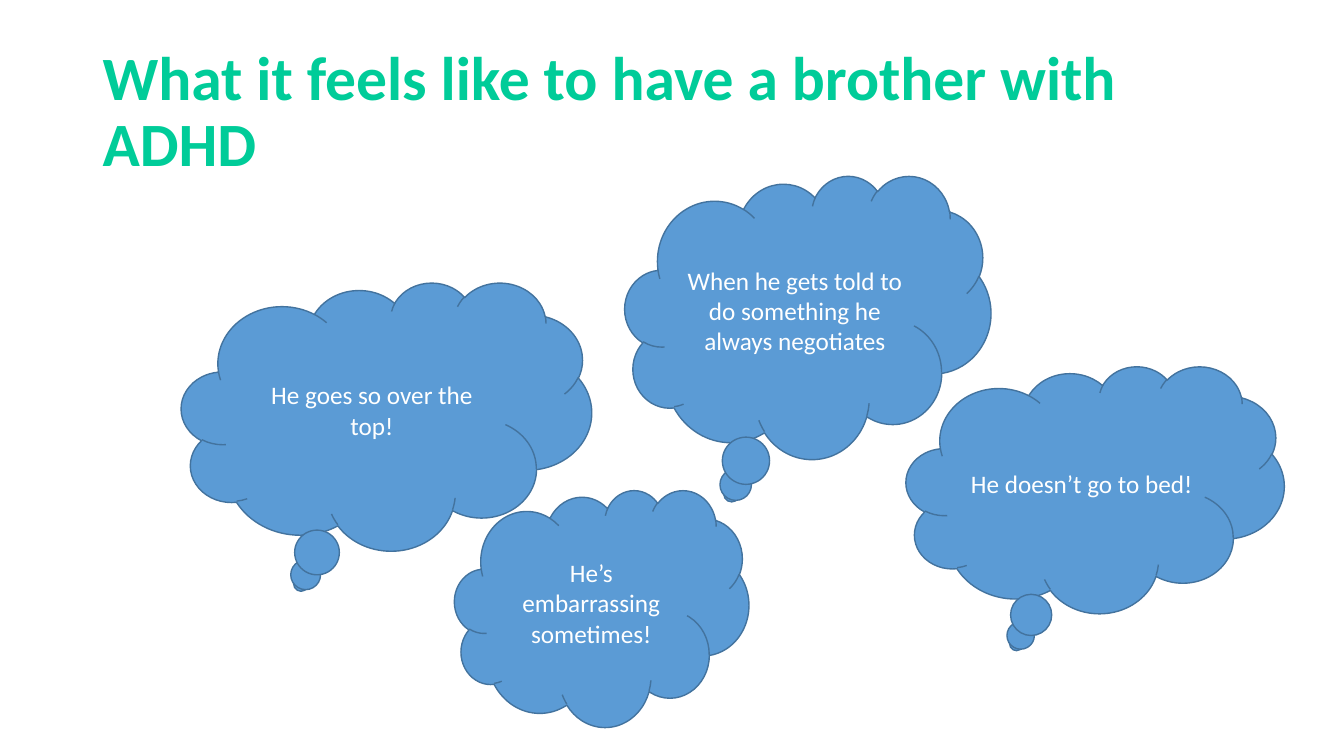
import pptx
import pptx.dml.color
import pptx.enum.shapes
import pptx.enum.text
import pptx.util

Pt = pptx.util.Pt
CALLOUT = pptx.enum.shapes.MSO_SHAPE.CLOUD_CALLOUT
CLOUD = pptx.enum.shapes.MSO_SHAPE.CLOUD
MIDDLE = pptx.enum.text.MSO_ANCHOR.MIDDLE
CENTER = pptx.enum.text.PP_ALIGN.CENTER

# Outline, text and box (left, top, width, height in points)
THOUGHTS = [
    (CALLOUT, "He goes so over the top!", (129.6, 201.6, 293, 191.5)),
    (CALLOUT, "He doesn’t go to bed!", (647.3, 261.4, 270, 176.4)),
    (CALLOUT, "When he gets told to do something he always negotiates",
     (446.4, 125.3, 261.4, 202.3)),
    (CLOUD, "He’s embarrassing sometimes!", (324.7, 349.9, 210.2, 169.2)),
]


def color(hex_code):
    return pptx.dml.color.RGBColor.from_string(hex_code)


def write(shape, text, size, hex_code, bold=False):
    """Put one vertically centred paragraph into the shape and return it."""
    frame = shape.text_frame
    frame.word_wrap = True
    frame.vertical_anchor = MIDDLE
    paragraph = frame.paragraphs[0]
    paragraph.text = text
    font = paragraph.font
    font.name = "Calibri"
    font.size = Pt(size)
    font.bold = bold
    font.color.rgb = color(hex_code)
    return paragraph


def add_title(slide, text, box):
    title = slide.shapes.add_textbox(*map(Pt, box))
    write(title, text, 44, "00CC99", bold=True).line_spacing = 0.9


def add_thought(slide, outline, text, box):
    thought = slide.shapes.add_shape(outline, *map(Pt, box))
    thought.shadow.inherit = False
    thought.fill.solid()
    thought.fill.fore_color.rgb = color("5B9BD5")
    thought.line.color.rgb = color("43739E")
    thought.line.width = Pt(1)
    write(thought, text, 18, "FFFFFF").alignment = CENTER


def main():
    deck = pptx.Presentation()
    deck.slide_width, deck.slide_height = Pt(960), Pt(540)
    slide = deck.slides.add_slide(deck.slide_layouts[6])
    add_title(slide, "What it feels like to have a brother with ADHD",
              (66.2, 28.8, 828, 104.4))
    for outline, text, box in THOUGHTS:
        add_thought(slide, outline, text, box)
    deck.save("out.pptx")


if __name__ == "__main__":
    main()
